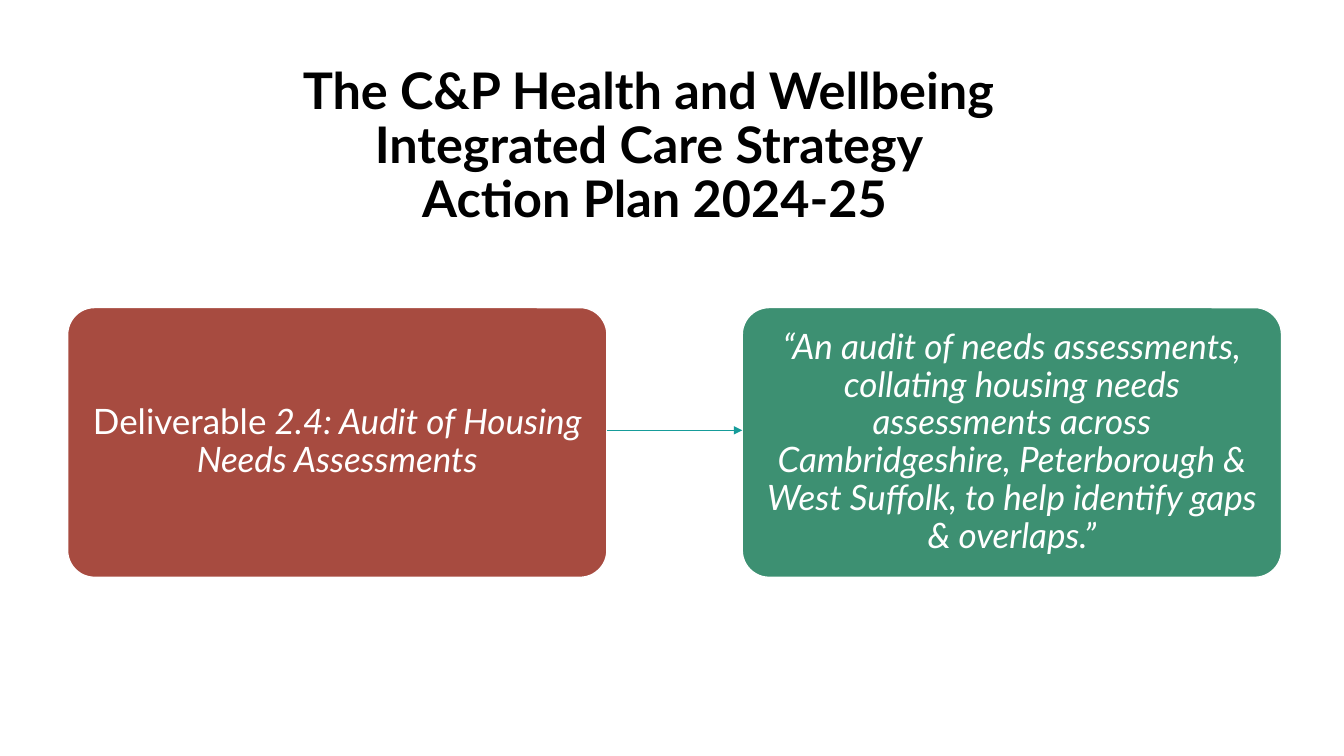
"""Build the action plan slide linking a deliverable to its description."""
import pptx
import pptx.util
import pptx.dml.color
import pptx.enum.shapes
import pptx.enum.text
import pptx.oxml
import pptx.oxml.ns
import lxml.etree

Pt = pptx.util.Pt
COLOURS = {"black": "000000", "white": "FFFFFF", "red": "A74B40", "green": "3D9072", "teal": "169C9A"}
FONT = "Lato"
BOX_TOP, BOX_WIDTH, BOX_HEIGHT = 219.7, 385.2, 192.7
BOXES = [
    (48.3, "red", [("Deliverable", False), (" 2.4: Audit of Housing Needs Assessments", True)]),
    (530.2, "green", [("“An audit of needs assessments, collating housing needs assessments across "
                       "Cambridgeshire, Peterborough & West Suffolk, to help identify gaps & overlaps.”", True)]),
]


def colour(name):
    return pptx.dml.color.RGBColor.from_string(COLOURS[name])


def format_paragraph(paragraph, size, colour_name):
    paragraph.alignment = pptx.enum.text.PP_ALIGN.CENTER
    paragraph.line_spacing = 0.9
    paragraph.font.name = FONT
    paragraph.font.size = Pt(size)
    paragraph.font.color.rgb = colour(colour_name)


presentation = pptx.Presentation()
presentation.slide_width = Pt(960)
presentation.slide_height = Pt(540)
slide = presentation.slides.add_slide(presentation.slide_layouts[5])

title = slide.shapes.title
title.left, title.top, title.width, title.height = Pt(48.2), Pt(43.2), Pt(838.8), Pt(139.7)
title.text_frame.vertical_anchor = pptx.enum.text.MSO_ANCHOR.TOP
title.text_frame.text = "The C&P Health and Wellbeing \vIntegrated Care Strategy \vAction Plan 2024-25"
title_paragraph = title.text_frame.paragraphs[0]
format_paragraph(title_paragraph, 36, "black")
title_paragraph.font.bold = True

for left, fill, runs in BOXES:
    box = slide.shapes.add_shape(pptx.enum.shapes.MSO_SHAPE.ROUNDED_RECTANGLE,
                                 Pt(left), Pt(BOX_TOP), Pt(BOX_WIDTH), Pt(BOX_HEIGHT))
    box.adjustments[0] = 0.1
    box.shadow.inherit = False
    box.fill.solid()
    box.fill.fore_color.rgb = colour(fill)
    box.line.color.rgb = colour("white")
    box.line.width = Pt(1)
    frame = box.text_frame
    frame.word_wrap = True
    frame.vertical_anchor = pptx.enum.text.MSO_ANCHOR.MIDDLE
    frame.margin_left = frame.margin_right = Pt(3.6)
    frame.margin_top = frame.margin_bottom = Pt(2.4)
    paragraph = frame.paragraphs[0]
    format_paragraph(paragraph, 25, "white")
    for text, italic in runs:
        run = paragraph.add_run()
        run.text = text
        run.font.italic = italic

arrow_y = Pt(307.4)
arrow = slide.shapes.add_connector(pptx.enum.shapes.MSO_CONNECTOR.STRAIGHT,
                                   Pt(BOXES[0][0] + BOX_WIDTH), arrow_y, Pt(BOXES[1][0]), arrow_y)
arrow.line.color.rgb = colour("teal")
arrow.line.width = Pt(0.5)
lxml.etree.SubElement(arrow.line._get_or_add_ln(), pptx.oxml.ns.qn("a:tailEnd"), type="triangle")
lxml.etree.SubElement(arrow._element.spPr, pptx.oxml.ns.qn("a:effectLst"))

presentation.save("out.pptx")
